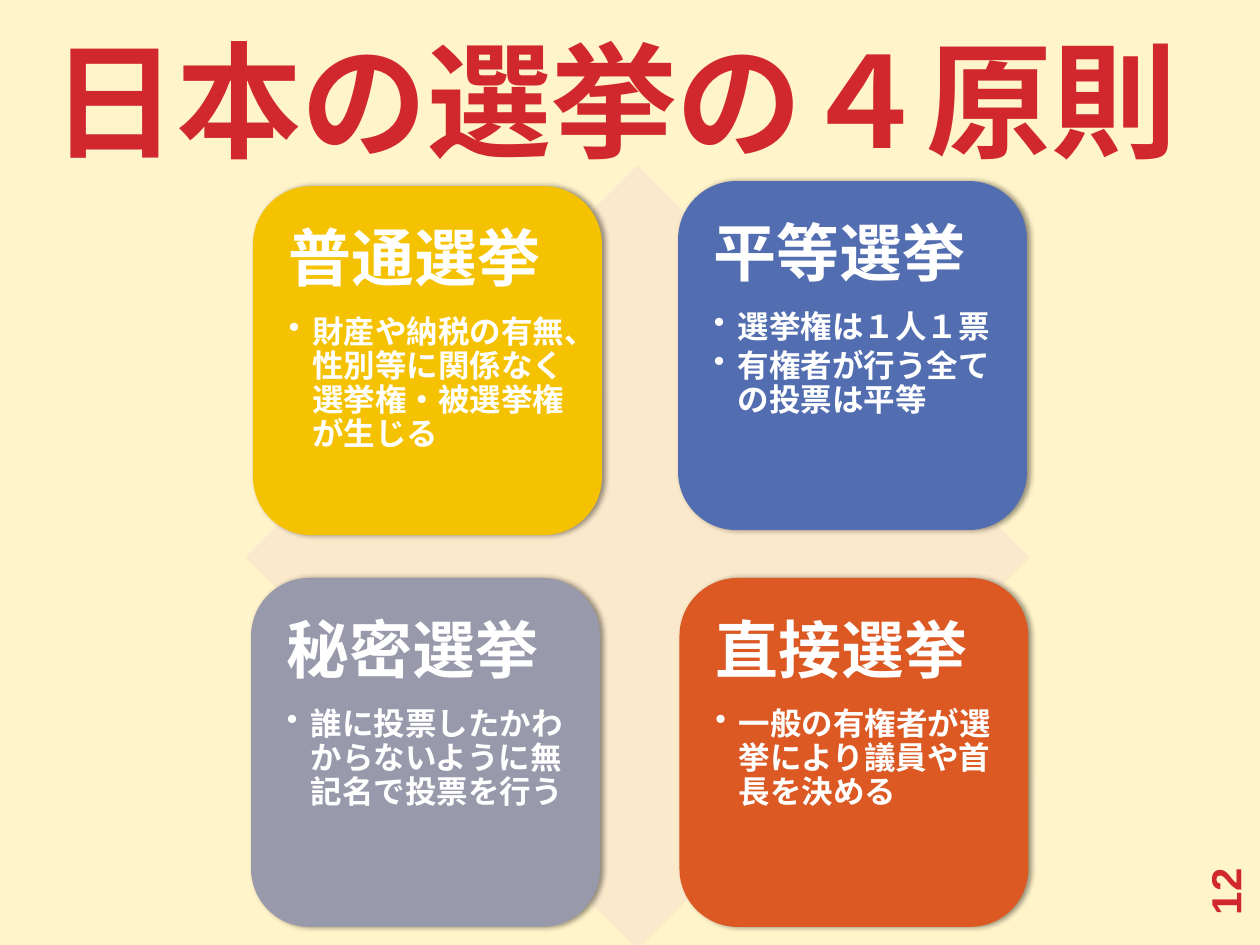
from lxml import etree
from pptx import Presentation
from pptx import util as u
from pptx.dml.color import RGBColor
from pptx.enum import shapes, text
from pptx.oxml.ns import qn

COLORS = {
    "background": "FFF4CA", "accent": "D1282E", "diamond": "FBE9CC",
    "gold": "F5C201", "blue": "526DB0", "gray": "989AAC",
    "orange": "DC5924", "white": "FFFFFF", "shadow": "000000",
}
JAPANESE = "Noto Sans CJK JP"
TITLE = "日本の選挙の４原則"
PAGE_NUMBER = "12"
PRINCIPLES = [
    ("普通選挙", ["財産や納税の有無、性別等に関係なく選挙権・被選挙権が生じる"], "gold", (144.6, 106.4)),
    ("平等選挙", ["選挙権は１人１票", "有権者が行う全ての投票は平等"], "blue", (387.5, 103.5)),
    ("秘密選挙", ["誰に投票したかわからないように無記名で投票を行う"], "gray", (143.5, 330.3)),
    ("直接選挙", ["一般の有権者が選挙により議員や首長を決める"], "orange", (388.3, 330.3)),
]
CARD_SIZE = 199.4
TEXT_SIZE = 180
TEXT_OFFSET = (CARD_SIZE - TEXT_SIZE) / 2
INDENT = 13.5


def color(name):
    return RGBColor.from_string(COLORS[name])


def add_block(slide, kind, left, top, width, height, fill):
    shape = slide.shapes.add_shape(kind, u.Pt(left), u.Pt(top), u.Pt(width), u.Pt(height))
    shape.fill.solid()
    shape.fill.fore_color.rgb = color(fill)
    shape.line.fill.background()
    shape.shadow.inherit = False
    return shape


def add_shadow(shape):
    effects = shape._element.spPr.find(qn("a:effectLst"))
    shadow = etree.SubElement(effects, qn("a:outerShdw"), blurRad=str(u.Pt(3.1)),
                              dist=str(u.Pt(1.8)), dir="0", rotWithShape="0")
    tint = etree.SubElement(shadow, qn("a:srgbClr"), val=COLORS["shadow"])
    etree.SubElement(tint, qn("a:alpha"), val="40000")


def add_text_box(slide, left, top, width, height, anchor, insets):
    shape = slide.shapes.add_textbox(u.Pt(left), u.Pt(top), u.Pt(width), u.Pt(height))
    frame = shape.text_frame
    frame.word_wrap = True
    frame.vertical_anchor = anchor
    frame.margin_left, frame.margin_top, frame.margin_right, frame.margin_bottom = map(u.Pt, insets)
    return shape


def add_run(paragraph, words, size, ink, font=JAPANESE):
    run = paragraph.add_run()
    run.text = words
    run.font.size = u.Pt(size)
    run.font.bold = True
    run.font.color.rgb = color(ink)
    run.font.name = font
    etree.SubElement(run._r.get_or_add_rPr(), qn("a:ea"), typeface=font)
    return run


def add_bullet(paragraph):
    paragraph.level = 1
    properties = paragraph._p.get_or_add_pPr()
    properties.set("marL", str(u.Pt(INDENT)))
    properties.set("indent", str(-u.Pt(INDENT)))
    etree.SubElement(properties, qn("a:buChar"), char="•")


def add_principle(slide, heading, points, fill, position):
    left, top = position
    card = add_block(slide, shapes.MSO_SHAPE.ROUNDED_RECTANGLE, left, top, CARD_SIZE, CARD_SIZE, fill)
    add_shadow(card)
    box = add_text_box(slide, left + TEXT_OFFSET, top + TEXT_OFFSET, TEXT_SIZE, TEXT_SIZE,
                       text.MSO_ANCHOR.TOP, (10.8, 13, 10.8, 10.8))
    paragraph = box.text_frame.paragraphs[0]
    paragraph.line_spacing = u.Pt(39)
    paragraph.space_after = u.Pt(12.6)
    add_run(paragraph, heading, 36, "white")
    for point in points:
        paragraph = box.text_frame.add_paragraph()
        paragraph.line_spacing = u.Pt(19.4)
        paragraph.space_after = u.Pt(2.7)
        add_bullet(paragraph)
        add_run(paragraph, point, 18, "white")


def main():
    presentation = Presentation()
    presentation.slide_width, presentation.slide_height = u.Pt(720), u.Pt(540)
    slide = presentation.slides.add_slide(presentation.slide_layouts[6])
    slide.background.fill.solid()
    slide.background.fill.fore_color.rgb = color("background")

    title = add_text_box(slide, 22.5, 9.5, 675, 90, text.MSO_ANCHOR.BOTTOM, (7.2, 3.6, 7.2, 0))
    run = add_run(title.text_frame.paragraphs[0], TITLE, 72, "accent")
    run._r.get_or_add_rPr().set("spc", "-60")

    add_block(slide, shapes.MSO_SHAPE.DIAMOND, 140.4, 94.5, 448, 448, "diamond")
    for principle in PRINCIPLES:
        add_principle(slide, *principle)

    number = add_text_box(slide, 648, 463.7, 103.7, 28.8, text.MSO_ANCHOR.MIDDLE, (7.2, 3.6, 7.2, 3.6))
    number.rotation = 270
    add_run(number.text_frame.paragraphs[0], PAGE_NUMBER, 24, "accent", "Arial")

    presentation.save("out.pptx")


if __name__ == "__main__":
    main()
